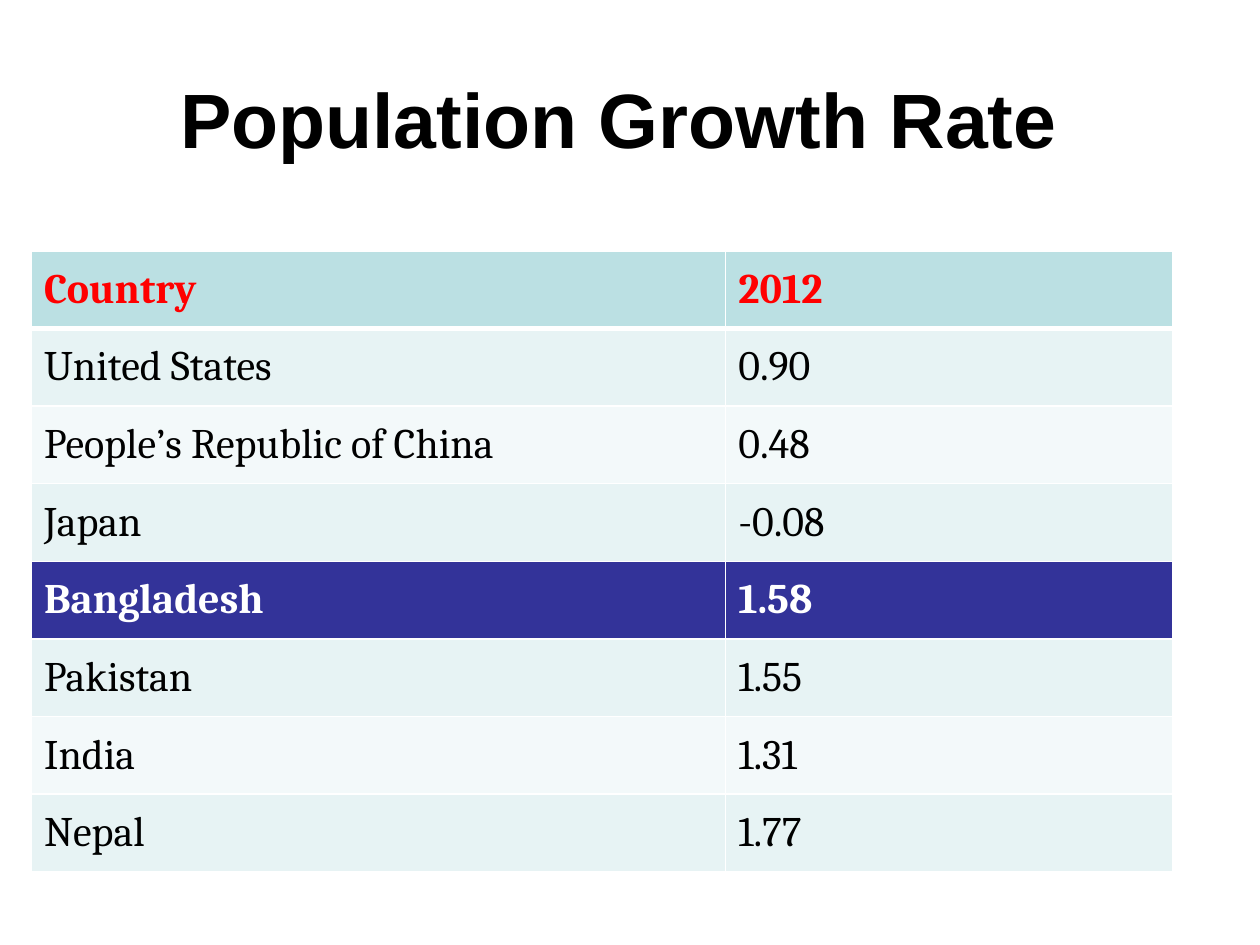
import dataclasses

import lxml.etree
import pptx
import pptx.dml.color
import pptx.enum.text
import pptx.oxml.ns
import pptx.util

Inches = pptx.util.Inches
Pt = pptx.util.Pt


@dataclasses.dataclass(frozen=True)
class Theme:
    black: str = "000000"
    white: str = "FFFFFF"
    red: str = "FF0000"
    navy: str = "333399"
    teal: str = "BBE0E3"
    bands: tuple = ("E7F3F4", "F3F9FA")
    sans: str = "Arial"
    serif: str = "Cambria"
    head: int = 44
    body: int = 24
    thin: int = 1
    thick: int = 3


THEME = Theme()
FOCUS = "Bangladesh"
RATES = [
    ("Country", "2012"),
    ("United States", "0.90"),
    ("People’s Republic of China", "0.48"),
    ("Japan", "-0.08"),
    (FOCUS, "1.58"),
    ("Pakistan", "1.55"),
    ("India", "1.31"),
    ("Nepal", "1.77"),
]


def rgb(color):
    return pptx.dml.color.RGBColor.from_string(color)


def style(frame, face, size, color, bold):
    for run in frame.paragraphs[0].runs:
        font = run.font
        font.name, font.size, font.bold = face, Pt(size), bold
        font.color.rgb = rgb(color)


def border(cell, side, width):
    qn = pptx.oxml.ns.qn
    props = cell._tc.get_or_add_tcPr()
    line = lxml.etree.SubElement(props, qn("a:ln" + side), w=str(Pt(width)))
    fill = lxml.etree.SubElement(line, qn("a:solidFill"))
    lxml.etree.SubElement(fill, qn("a:srgbClr"), val=THEME.white)


def look(row, name):
    if row == 0:
        return THEME.teal, THEME.red, True
    if name == FOCUS:
        return THEME.navy, THEME.white, True
    return THEME.bands[(row - 1) % 2], THEME.black, False


def add_title(slide, text, left, top, width, height):
    title = slide.shapes.title
    title.left, title.top = Inches(left), Inches(top)
    title.width, title.height = Inches(width), Inches(height)
    frame = title.text_frame
    frame.text = text
    frame.word_wrap = True
    frame.vertical_anchor = pptx.enum.text.MSO_ANCHOR.MIDDLE
    frame.paragraphs[0].alignment = pptx.enum.text.PP_ALIGN.CENTER
    style(frame, THEME.sans, THEME.head, THEME.black, True)


def add_rates(slide, rates, left, top, width, height):
    table = slide.shapes.add_table(
        len(rates), 2, Inches(left), Inches(top), Inches(width), Inches(height)
    ).table
    first = 5.51
    table.columns[0].width = Inches(first)
    table.columns[1].width = Inches(width - first)
    for row, pair in enumerate(rates):
        back, ink, bold = look(row, pair[0])
        edges = {
            "L": THEME.thin,
            "R": THEME.thin,
            "T": THEME.thick if row == 1 else THEME.thin,
            "B": THEME.thick if row == 0 else THEME.thin,
        }
        for col, text in enumerate(pair):
            cell = table.cell(row, col)
            cell.text_frame.text = text
            cell.vertical_anchor = pptx.enum.text.MSO_ANCHOR.MIDDLE
            style(cell.text_frame, THEME.serif, THEME.body, ink, bold)
            for side, size in edges.items():
                border(cell, side, size)
            cell.fill.solid()
            cell.fill.fore_color.rgb = rgb(back)


def main():
    deck = pptx.Presentation()
    deck.slide_width, deck.slide_height = Inches(10), Inches(7.5)
    slide = deck.slides.add_slide(deck.slide_layouts.get_by_name("Title Only"))
    add_title(slide, "Population Growth Rate ", 0, 0.31, 10, 1.25)
    add_rates(slide, RATES, 0.25, 1.99, 9.06, 4.93)
    deck.save("out.pptx")


if __name__ == "__main__":
    main()
